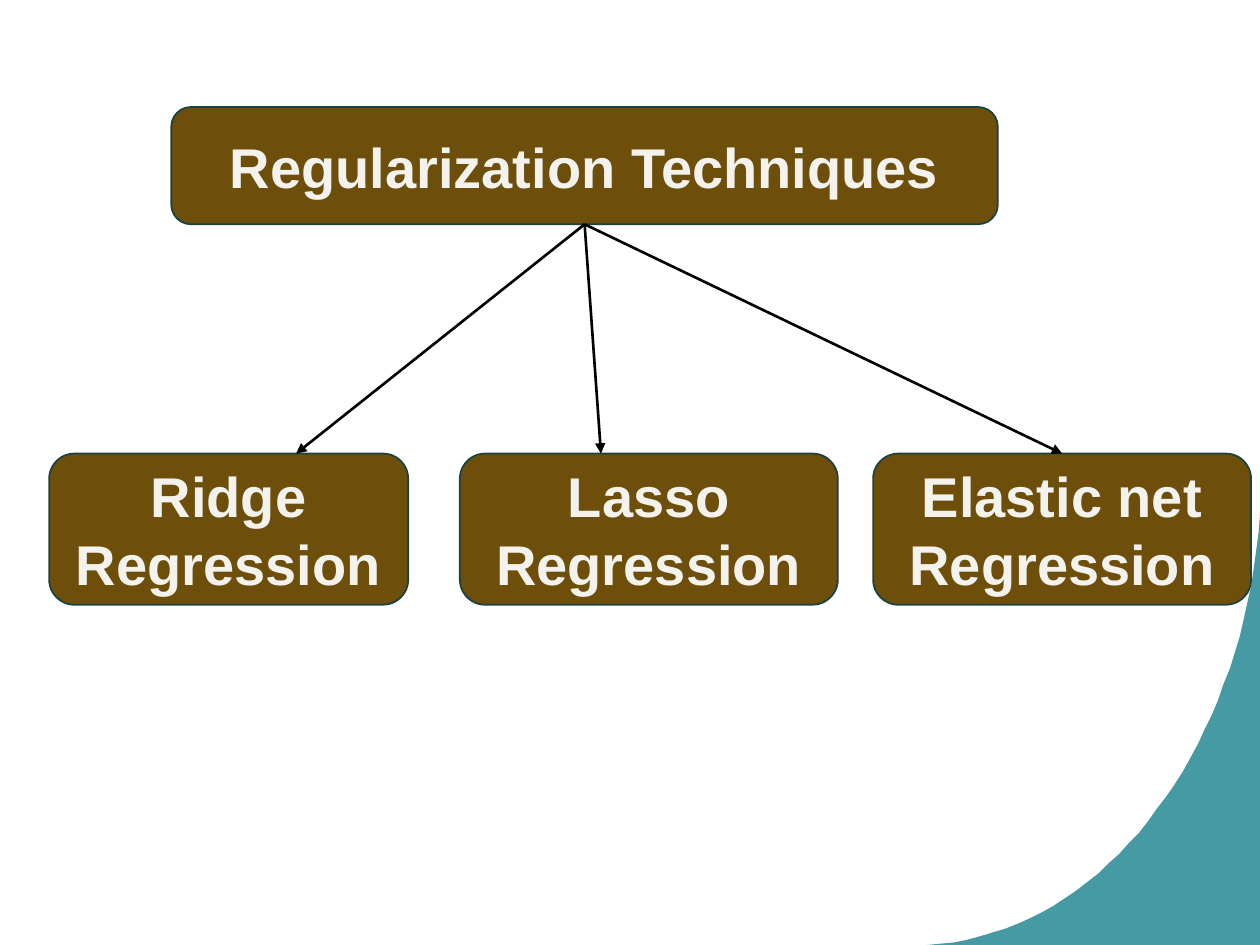
import pptx
import pptx.util
import pptx.dml.color
import pptx.enum.shapes
import pptx.enum.text
import pptx.oxml.ns
from lxml import etree

PX = 9144  # EMU per px, 100 px to the inch
BROWN, EDGE, CREAM, TEAL = "6D4E0B", "1A433F", "F4F2EC", "18818C"


def px(n):
    return pptx.util.Emu(n * PX)


def rgb(color):
    return pptx.dml.color.RGBColor.from_string(color)


def add_xml(parent, tag, **attrs):
    return etree.SubElement(parent, pptx.oxml.ns.qn(tag), **attrs)


def add_corner(slide, left, top, width, height, steps=40):
    """Translucent corner piece with a concave Bezier edge."""
    controls = [(0, height), (144, height), (261, 194), (width, 0)]
    curve = []
    for i in range(steps + 1):
        t = i / steps
        weights = [(1 - t) ** 3, 3 * t * (1 - t) ** 2, 3 * t * t * (1 - t), t ** 3]
        curve.append(tuple(sum(w * c[axis] for w, c in zip(weights, controls))
                           for axis in (0, 1)))
    builder = slide.shapes.build_freeform(*curve[0], scale=PX)
    builder.add_line_segments(curve[1:] + [(width, height)], close=True)
    sp = builder.convert_to_shape(px(left), px(top))
    sp.shadow.inherit = False
    sp.line.fill.background()
    sp.fill.solid()
    sp.fill.fore_color.rgb = rgb(TEAL)
    color = sp.fill._xPr.find(".//" + pptx.oxml.ns.qn("a:srgbClr"))
    add_xml(color, "a:alpha", val="80000")


def add_box(slide, text, left, top, width, height):
    sp = slide.shapes.add_shape(pptx.enum.shapes.MSO_SHAPE.ROUNDED_RECTANGLE,
                                px(left), px(top), px(width), px(height))
    sp.shadow.inherit = False
    sp.fill.solid()
    sp.fill.fore_color.rgb = rgb(BROWN)
    sp.line.color.rgb = rgb(EDGE)
    sp.line.width = pptx.util.Pt(1)
    tf = sp.text_frame
    tf.text = text
    tf.word_wrap = True
    tf.vertical_anchor = pptx.enum.text.MSO_ANCHOR.MIDDLE
    p = tf.paragraphs[0]
    p.alignment = pptx.enum.text.PP_ALIGN.CENTER
    font = p.runs[0].font
    font.name, font.size, font.bold = "Arial", pptx.util.Pt(32), True
    font.color.rgb = rgb(CREAM)
    return sp


def add_arrow(slide, root, child, end_x):
    """Arrow from the root's bottom to the child's top edge at end_x."""
    line = slide.shapes.add_connector(
        pptx.enum.shapes.MSO_CONNECTOR.STRAIGHT,
        root.left + root.width // 2, root.top + root.height, px(end_x), child.top)
    line.begin_connect(root, 2)
    if px(end_x) == child.left + child.width // 2:
        line.end_connect(child, 0)
    line.line.color.rgb = rgb("000000")
    line.line.width = pptx.util.Pt(1.5)
    add_xml(line.line._get_or_add_ln(), "a:tailEnd", type="triangle")
    add_xml(line._element.spPr, "a:effectLst")


def add_tree(slide, left, top):
    root = add_box(slide, "Regularization Techniques", left + 97, top, 656, 93)
    branches = [("Ridge Regression", 0, 285, 196),
                ("Lasso Regression", 326, 300, 438),
                ("Elastic net Regression", 654, 300, 804)]
    children = [add_box(slide, text, left + x, top + 275, width, 120)
                for text, x, width, _ in branches]
    for child, (_, _, _, end_x) in zip(children, branches):
        add_arrow(slide, root, child, left + end_x)


def main():
    prs = pptx.Presentation()
    prs.slide_width, prs.slide_height = px(1000), px(750)
    slide = prs.slides.add_slide(prs.slide_layouts[6])
    add_corner(slide, 725, 408, 275, 342)
    add_tree(slide, 39, 85)
    prs.save("out.pptx")


if __name__ == "__main__":
    main()
